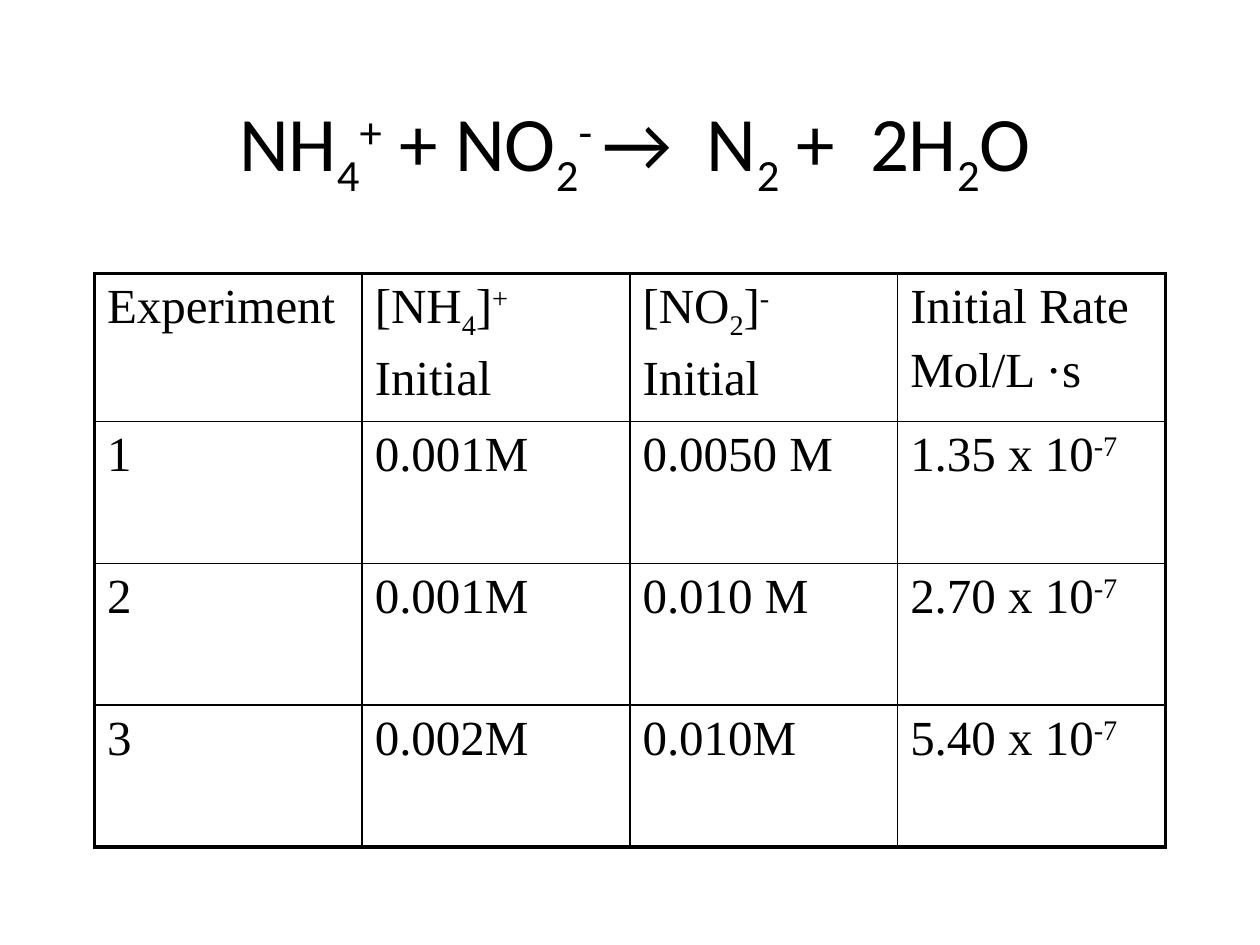
from lxml import etree
from pptx import Presentation, util as u
from pptx.dml.color import RGBColor
from pptx.enum import text
from pptx.oxml import ns

BLACK = RGBColor(0, 0, 0)
BASELINES = {"_": "-25000", "^": "30000"}
EQUATION = "NH|_4|^+| + NO|_2|^- |→  N|_2| +  2H|_2|O"
RATES = [
    ["Experiment", "[NH|_4|]|^+\nInitial", "[NO|_2|]|^-\nInitial", "Initial Rate\nMol/L ·s"],
    ["1", "0.001M", "0.0050 M", "1.35 x 10|^-7"],
    ["2", "0.001M", "0.010 M", "2.70 x 10|^-7"],
    ["3", "0.002M", "0.010M", "5.40 x 10|^-7"],
]


class SlideWriter:
    """Draws chemistry text and ruled tables; in text, | parts runs, _ lowers and ^ raises one."""

    title_font, title_size = "Calibri", u.Pt(44)
    table_font, table_size = "Times New Roman", u.Pt(28)
    paragraph_gap = u.Pt(5.6)
    inner_rule, outer_rule = u.Pt(1), u.Pt(2.25)

    def __init__(self, slide):
        self.slide = slide

    def formula(self, paragraph, markup, font, size):
        paragraph.font.name = font
        paragraph.font.size = size
        paragraph.font.color.rgb = BLACK
        for part in markup.split("|"):
            run = paragraph.add_run()
            baseline = BASELINES.get(part[0])
            run.text = part[1:] if baseline else part
            if baseline:
                run.font._element.set("baseline", baseline)

    def title(self, markup, left, top, width, height):
        box = self.slide.shapes.add_textbox(left, top, width, height)
        frame = box.text_frame
        frame.word_wrap = True
        frame.vertical_anchor = text.MSO_ANCHOR.MIDDLE
        heading = frame.paragraphs[0]
        heading.alignment = text.PP_ALIGN.CENTER
        self.formula(heading, markup, self.title_font, self.title_size)

    def border(self, cell, side, width):
        properties = cell._tc.get_or_add_tcPr()
        line = etree.SubElement(properties, ns.qn(f"a:ln{side}"), w=str(int(width)))
        fill = etree.SubElement(line, ns.qn("a:solidFill"))
        etree.SubElement(fill, ns.qn("a:srgbClr"), val=str(BLACK))

    def table(self, rows, left, top, width, height):
        row_count, column_count = len(rows), len(rows[0])
        grid = self.slide.shapes.add_table(
            row_count, column_count, left, top, width, height).table
        grid.first_row = grid.horz_banding = False
        for r, row in enumerate(rows):
            for c, entry in enumerate(row):
                cell = grid.cell(r, c)
                for index, markup in enumerate(entry.split("\n")):
                    frame = cell.text_frame
                    paragraph = frame.add_paragraph() if index else frame.paragraphs[0]
                    paragraph.space_before = self.paragraph_gap
                    self.formula(paragraph, markup, self.table_font, self.table_size)
                outer_sides = {"L": c == 0, "R": c == column_count - 1,
                               "T": r == 0, "B": r == row_count - 1}
                for side, is_outer in outer_sides.items():
                    self.border(cell, side, self.outer_rule if is_outer else self.inner_rule)
                cell.fill.background()


def main():
    deck = Presentation()
    deck.slide_width, deck.slide_height = u.Inches(10), u.Inches(7.5)
    writer = SlideWriter(deck.slides.add_slide(deck.slide_layouts[6]))
    writer.title(EQUATION, u.Inches(0.75), u.Inches(0.42), u.Inches(8.58), u.Inches(1.5))
    writer.table(RATES, u.Inches(0.75), u.Inches(2.17), u.Inches(8.5), u.Inches(4.5))
    deck.save("out.pptx")


if __name__ == "__main__":
    main()
